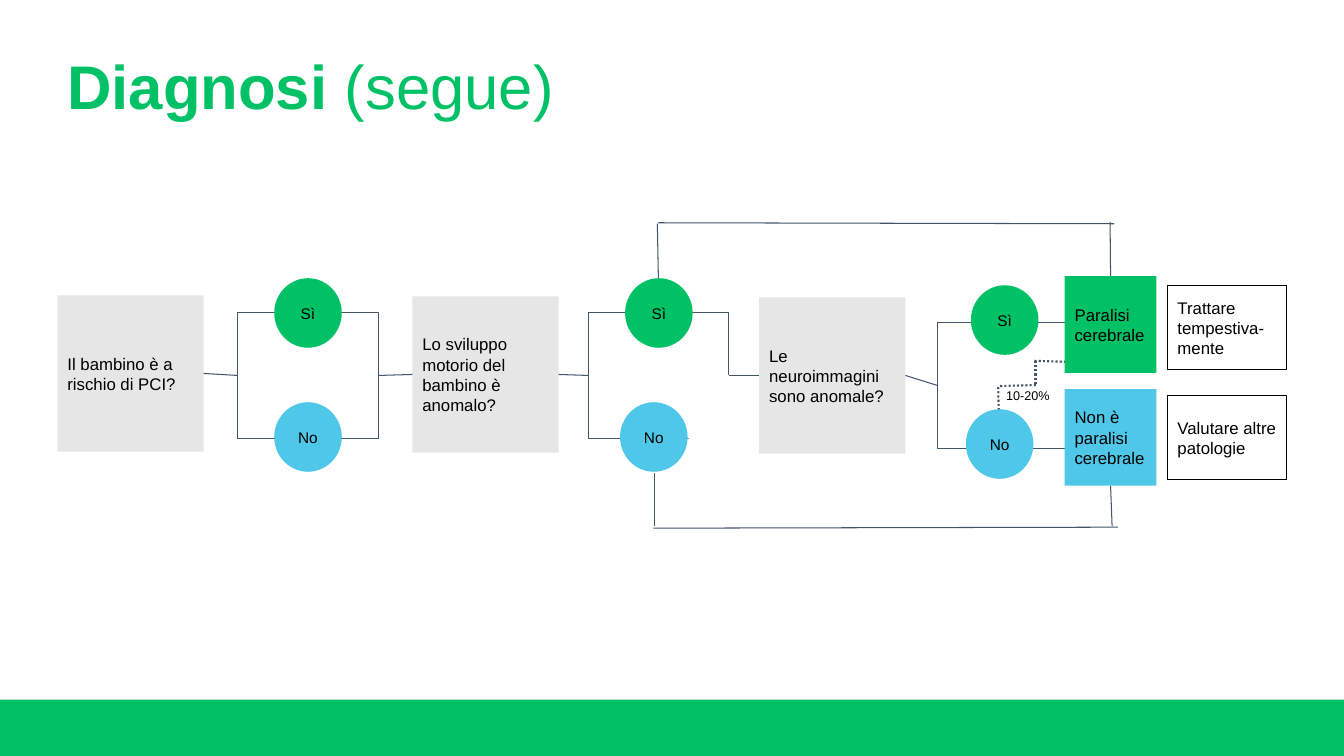
from lxml import etree
from pptx import Presentation
from pptx.dml.color import RGBColor
from pptx.enum import dml, shapes, text
from pptx.oxml import ns
from pptx.util import Inches, Pt

GREEN, BLUE, GREY = "00C165", "4FC7E8", "E7E6E6"
WHITE, BLACK, SLATE = "FFFFFF", "000000", "44546A"
RECTANGLE, OVAL = shapes.MSO_SHAPE.RECTANGLE, shapes.MSO_SHAPE.OVAL
TOP, LEFT, BOTTOM, RIGHT = range(4)

TITLE = [("Diagnosi ", True), ("(segue)", False)]
FOOTER = (0, 6.94, 13.33, 0.56)

BRACKETS = {"risk split": (2.36, 3.1), "motor split": (5.84, 3.1), "imaging split": (9.3, 3.2)}
BRACKET_SIZE = (1.39, 1.25)
MASKS = [(10.58, 2.95, 0.33, 1.54), (6.83, 3.72, 0.67, 0.84)]

QUESTIONS = {
    "risk": ("Il bambino è a rischio di PCI?", 0.57, 2.93),
    "motor": ("Lo sviluppo motorio del bambino è anomalo?", 4.09, 2.94),
    "imaging": ("Le neuroimmagini sono anomale?", 7.53, 2.95),
}
QUESTION_SIZE = (1.45, 1.55)

ANSWERS = [
    ("Sì", 2.72, 2.76, GREEN), ("No", 2.72, 3.99, BLUE),
    ("Sì", 6.2, 2.76, GREEN), ("No", 6.15, 3.99, BLUE),
    ("Sì", 9.63, 2.83, GREEN), ("No", 9.58, 4.06, BLUE),
]
ANSWER_SIZE = (0.67, 0.69)

DIAGNOSES = {
    "palsy": ("Paralisi cerebrale", 10.56, 2.74, GREEN),
    "other": ("Non è paralisi cerebrale", 10.56, 3.86, BLUE),
}
DIAGNOSIS_SIZE = (0.91, 0.96)

ACTIONS = [("Trattare tempestiva-mente", 11.58, 2.83), ("Valutare altre patologie", 11.58, 3.92)]
ACTION_SIZE = (1.18, 0.84)

FLOW = ["risk", "risk split", "motor", "motor split", "imaging", "imaging split"]
LOOPS = [
    ((6.52, 2.22), (6.53, 2.76), None),
    ((6.53, 2.21), (11.05, 2.22), None),
    ((11.01, 2.2), (11.02, 2.74), ("palsy", TOP)),
    ((11.03, 5.22), (11.03, 4.82), ("other", BOTTOM)),
    ((11.09, 5.23), (6.48, 5.24), None),
    ((6.49, 4.69), (6.49, 5.22), None),
]
DOTTED = [
    ((9.9, 3.84), (9.91, 4.24)),
    ((9.92, 3.83), (10.28, 3.82)),
    ((10.27, 3.58), (10.27, 3.81)),
    ((10.26, 3.58), (10.59, 3.59)),
]
SHARE = ("10-20%", 9.88, 3.81, 0.91, 0.23)


def color(value):
    return RGBColor.from_string(value)


def style_run(run, size, value, bold=False):
    run.font.name = "Arial"
    run.font.size = Pt(size)
    run.font.bold = bold
    run.font.color.rgb = color(value)


def write(shape, words, size, align=text.PP_ALIGN.LEFT):
    frame = shape.text_frame
    frame.text = words
    frame.word_wrap = True
    frame.vertical_anchor = text.MSO_ANCHOR.MIDDLE
    frame.margin_left = frame.margin_right = Inches(0.1)
    frame.margin_top = frame.margin_bottom = Inches(0.1)
    paragraph = frame.paragraphs[0]
    paragraph.alignment = align
    style_run(paragraph.runs[0], size, BLACK)


def add_block(box, fill=None, line=None, kind=RECTANGLE):
    shape = slide.shapes.add_shape(kind, *map(Inches, box))
    shape.shadow.inherit = False
    if fill:
        shape.fill.solid()
        shape.fill.fore_color.rgb = color(fill)
    else:
        shape.fill.background()
    if line:
        shape.line.color.rgb = color(line)
        shape.line.width = Pt(0.75)
    else:
        shape.line.fill.background()
    return shape


def add_line(start=(0, 0), end=(0, 0), width=0.75):
    line = slide.shapes.add_connector(
        shapes.MSO_CONNECTOR.STRAIGHT, *map(Inches, start + end))
    line.line.color.rgb = color(SLATE)
    line.line.width = Pt(width)
    etree.SubElement(line._element.spPr, ns.qn("a:effectLst"))
    return line


presentation = Presentation()
presentation.slide_width, presentation.slide_height = Inches(13.33), Inches(7.5)
slide = presentation.slides.add_slide(presentation.slide_layouts[6])
add_block(FOOTER, GREEN)

title = slide.shapes.add_textbox(Inches(0.57), Inches(0.5), Inches(5.47), Inches(0.78))
title.text_frame.word_wrap = True
title.text_frame.vertical_anchor = text.MSO_ANCHOR.MIDDLE
title_paragraph = title.text_frame.paragraphs[0]
title_paragraph.line_spacing = 0.9
for words, bold in TITLE:
    run = title_paragraph.add_run()
    run.text = words
    style_run(run, 44, GREEN, bold)

for start, end in DOTTED:
    add_line(start, end, 1.5).line.dash_style = dml.MSO_LINE.ROUND_DOT

nodes = {}
for name, corner in BRACKETS.items():
    nodes[name] = add_block(corner + BRACKET_SIZE, line=SLATE)
for mask in MASKS:
    add_block(mask, WHITE)
for name, (words, left, top) in QUESTIONS.items():
    nodes[name] = add_block((left, top) + QUESTION_SIZE, GREY)
    write(nodes[name], words, 12)
for name, (words, left, top, fill) in DIAGNOSES.items():
    nodes[name] = add_block((left, top) + DIAGNOSIS_SIZE, fill)
    write(nodes[name], words, 12)
for words, left, top, fill in ANSWERS:
    circle = add_block((left, top) + ANSWER_SIZE, fill, kind=OVAL)
    write(circle, words, 11, text.PP_ALIGN.CENTER)
for words, left, top in ACTIONS:
    write(add_block((left, top) + ACTION_SIZE, WHITE, BLACK), words, 12)

for source, target in zip(FLOW, FLOW[1:]):
    link = add_line()
    link.begin_connect(nodes[source], RIGHT)
    link.end_connect(nodes[target], LEFT)
for start, end, joint in LOOPS:
    loop = add_line(start, end)
    if joint:
        name, side = joint
        loop.end_connect(nodes[name], side)

share_words, *share_box = SHARE
write(slide.shapes.add_textbox(*map(Inches, share_box)), share_words, 9)

presentation.save("out.pptx")
